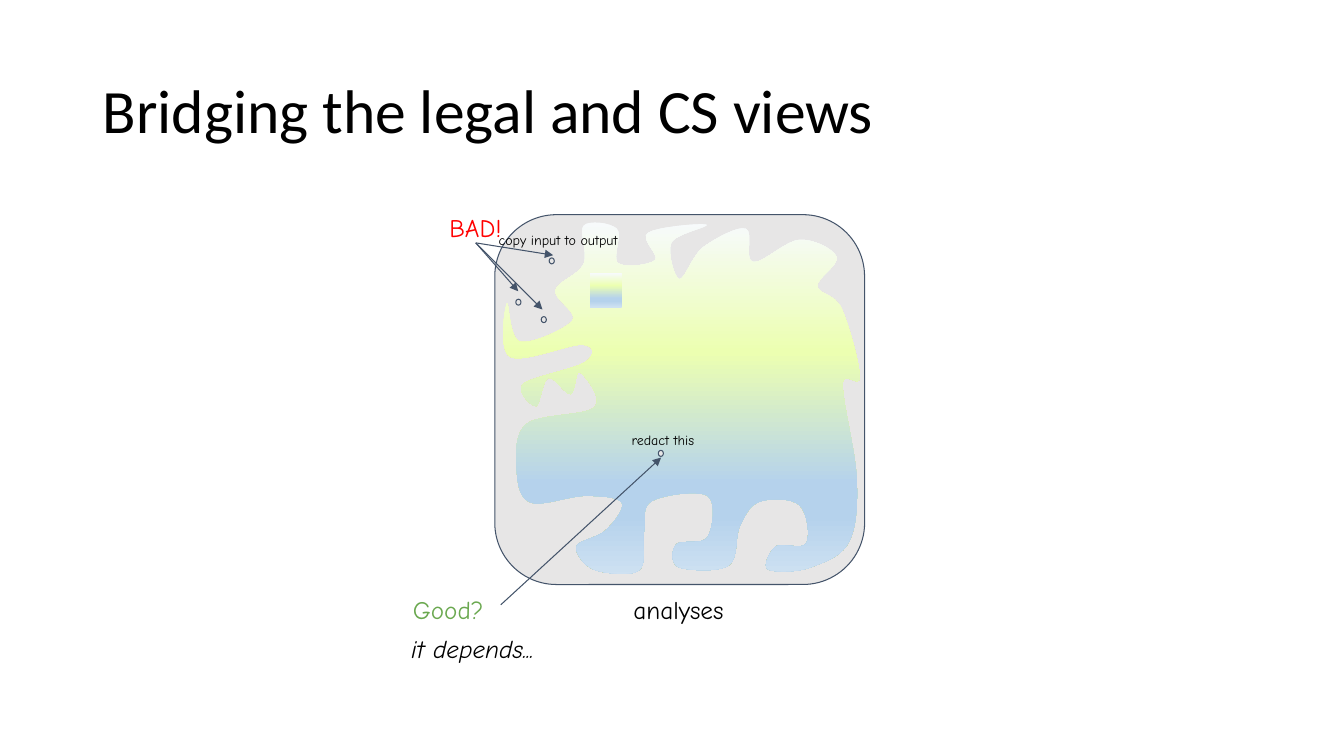
from dataclasses import dataclass

from lxml.etree import SubElement
from pptx import Presentation
from pptx.dml.color import RGBColor
from pptx.enum.shapes import MSO_CONNECTOR, MSO_SHAPE
from pptx.enum.text import MSO_ANCHOR, PP_ALIGN
from pptx.oxml.ns import qn
from pptx.util import Cm, Pt


@dataclass(frozen=True)
class Theme:
    title_font: str = "Calibri"
    label_font: str = "Comic Neue"
    title_size: int = 44
    label_size: int = 18
    note_size: int = 10
    line_width: float = 0.75
    text: str = "000000"
    bad: str = "FF0000"
    good: str = "6AA84F"
    panel: str = "E7E6E6"
    line: str = "44546A"
    gradient: tuple = ((0, "F7FAFD"), (37, "ECFFB1"), (74, "B5D2EC"),
                       (83, "B5D2EC"), (100, "CEE1F2"))


# Points the smooth region outline passes through, in hundredths of an inch
REGION_POINTS = (
    (503, 301), (516, 339), (568, 318), (551, 288), (579, 262), (579, 224),
    (612, 227), (613, 261), (650, 258), (643, 231), (701, 223), (666, 241),
    (674, 277), (698, 245), (740, 227), (747, 260), (793, 238), (830, 255),
    (811, 284), (835, 306), (853, 374), (836, 382), (850, 475), (842, 538),
    (804, 563), (762, 565), (770, 542), (800, 539), (793, 501), (753, 498),
    (734, 522), (723, 561), (674, 563), (671, 540), (702, 533), (702, 492),
    (647, 497), (639, 527), (634, 566), (589, 565), (572, 542), (600, 527),
    (617, 499), (581, 492), (528, 499), (513, 471), (522, 421), (590, 404),
    (575, 369), (566, 391), (544, 375), (532, 403), (519, 381), (581, 359),
    (578, 342), (506, 354),
)


def smooth_curves(points):
    """Return control, control and end point of each curve round a closed outline."""
    count = len(points)

    def control(index, direction):
        before, after = points[index - 1], points[(index + 1) % count]
        return tuple(here + direction * (end - start) / 6
                     for here, start, end in zip(points[index], before, after))

    curves = []
    for index in range(count):
        following = (index + 1) % count
        curves += [control(index, 1), control(following, -1), points[following]]
    return curves


class SlideBuilder:
    def __init__(self, slide, theme):
        self.slide = slide
        self.theme = theme

    def style_run(self, run, font, size, color, italic=False):
        run.font.name = font
        run.font.size = Pt(size)
        run.font.italic = italic
        run.font.color.rgb = RGBColor.from_string(color)

    def style_line(self, line):
        line.color.rgb = RGBColor.from_string(self.theme.line)
        line.width = Pt(self.theme.line_width)

    def title(self, text, left, top, width, height):
        shape = self.slide.shapes.title
        shape.left, shape.top = Cm(left), Cm(top)
        shape.width, shape.height = Cm(width), Cm(height)
        frame = shape.text_frame
        frame.text = text
        frame.vertical_anchor = MSO_ANCHOR.MIDDLE
        paragraph = frame.paragraphs[0]
        paragraph.alignment = PP_ALIGN.LEFT
        paragraph.line_spacing = 0.9
        self.style_run(paragraph.runs[0], self.theme.title_font,
                       self.theme.title_size, self.theme.text)

    def label(self, text, left, top, width, size=None, color=None,
              align=PP_ALIGN.CENTER, italic=False):
        shape = self.slide.shapes.add_textbox(Cm(left), Cm(top), Cm(width), Cm(1.1))
        frame = shape.text_frame
        frame.word_wrap = True
        frame.margin_left = frame.margin_right = Cm(0.25)
        frame.margin_top = frame.margin_bottom = Cm(0.25)
        frame.text = text
        paragraph = frame.paragraphs[0]
        paragraph.alignment = align
        self.style_run(paragraph.runs[0], self.theme.label_font,
                       size or self.theme.label_size, color or self.theme.text, italic)

    def outlined(self, kind, left, top, width, height):
        shape = self.slide.shapes.add_shape(kind, Cm(left), Cm(top), Cm(width), Cm(height))
        shape.shadow.inherit = False
        shape.fill.solid()
        shape.fill.fore_color.rgb = RGBColor.from_string(self.theme.panel)
        self.style_line(shape.line)

    def dot(self, left, top):
        self.outlined(MSO_SHAPE.OVAL, left, top, 0.13, 0.15)

    def fill_gradient(self, shape):
        shape.shadow.inherit = False
        shape.line.fill.background()
        shape.fill.gradient()
        shape.fill.gradient_angle = 270
        stops = next(shape.element.iter(qn("a:gsLst")))
        for stop in list(stops):
            stops.remove(stop)
        for percent, color in self.theme.gradient:
            stop = SubElement(stops, qn("a:gs"), pos=str(percent * 1000))
            SubElement(stop, qn("a:srgbClr"), val=color)

    def gradient_box(self, left, top, width, height):
        self.fill_gradient(self.slide.shapes.add_shape(
            MSO_SHAPE.RECTANGLE, Cm(left), Cm(top), Cm(width), Cm(height)))

    def gradient_region(self, points):
        builder = self.slide.shapes.build_freeform(*points[0], scale=Cm(2.54) / 100)
        builder.add_line_segments(smooth_curves(points), close=True)
        shape = builder.convert_to_shape()
        # Every three line segments become one Bezier curve
        outline = next(shape.element.iter(qn("a:path")))
        segments = outline.findall(qn("a:lnTo"))
        for index in range(0, len(segments), 3):
            curve = SubElement(outline, qn("a:cubicBezTo"))
            segments[index].addprevious(curve)
            for segment in segments[index:index + 3]:
                curve.append(segment[0])
                outline.remove(segment)
        self.fill_gradient(shape)

    def arrow(self, start, end):
        connector = self.slide.shapes.add_connector(
            MSO_CONNECTOR.STRAIGHT, *map(Cm, start + end))
        self.style_line(connector.line)
        line = next(connector.element.iter(qn("a:ln")))
        SubElement(line, qn("a:tailEnd"), type="triangle")
        SubElement(connector.element.spPr, qn("a:effectLst"))


def main():
    presentation = Presentation()
    presentation.slide_width, presentation.slide_height = Cm(33.87), Cm(19.05)
    theme = Theme()
    builder = SlideBuilder(
        presentation.slides.add_slide(presentation.slide_layouts[5]), theme)

    builder.title("Bridging the legal and CS views", 2.34, 1.02, 29.21, 3.68)

    # Space of analyses
    builder.outlined(MSO_SHAPE.ROUNDED_RECTANGLE, 12.47, 5.41, 9.32, 9.32)
    builder.label("analyses ", 15.67, 14.73, 3.07)
    builder.gradient_region(REGION_POINTS)
    builder.gradient_box(14.86, 6.88, 0.81, 0.86)

    # Bad analyses
    for left, top in ((13.84, 6.5), (13, 7.54), (13.64, 7.98)):
        builder.dot(left, top)
    builder.label("copy input to output", 11.51, 5.61, 5.11, theme.note_size)
    builder.label("BAD!", 10.97, 5.11, 2.03, color=theme.bad)
    for end in ((13.06, 7.34), (13.67, 7.8), (13.94, 6.43)):
        builder.arrow((11.99, 6.12), end)

    # Possibly good analysis
    builder.label("redact this", 14.15, 10.67, 5.11, theme.note_size)
    builder.dot(16.59, 11.35)
    builder.label("Good?", 9.96, 14.73, 2.67, color=theme.good)
    builder.arrow((12.62, 15.24), (16.66, 11.53))
    builder.label("it depends...", 10.11, 15.72, 4.29,
                  align=PP_ALIGN.LEFT, italic=True)

    presentation.save("out.pptx")


if __name__ == "__main__":
    main()
